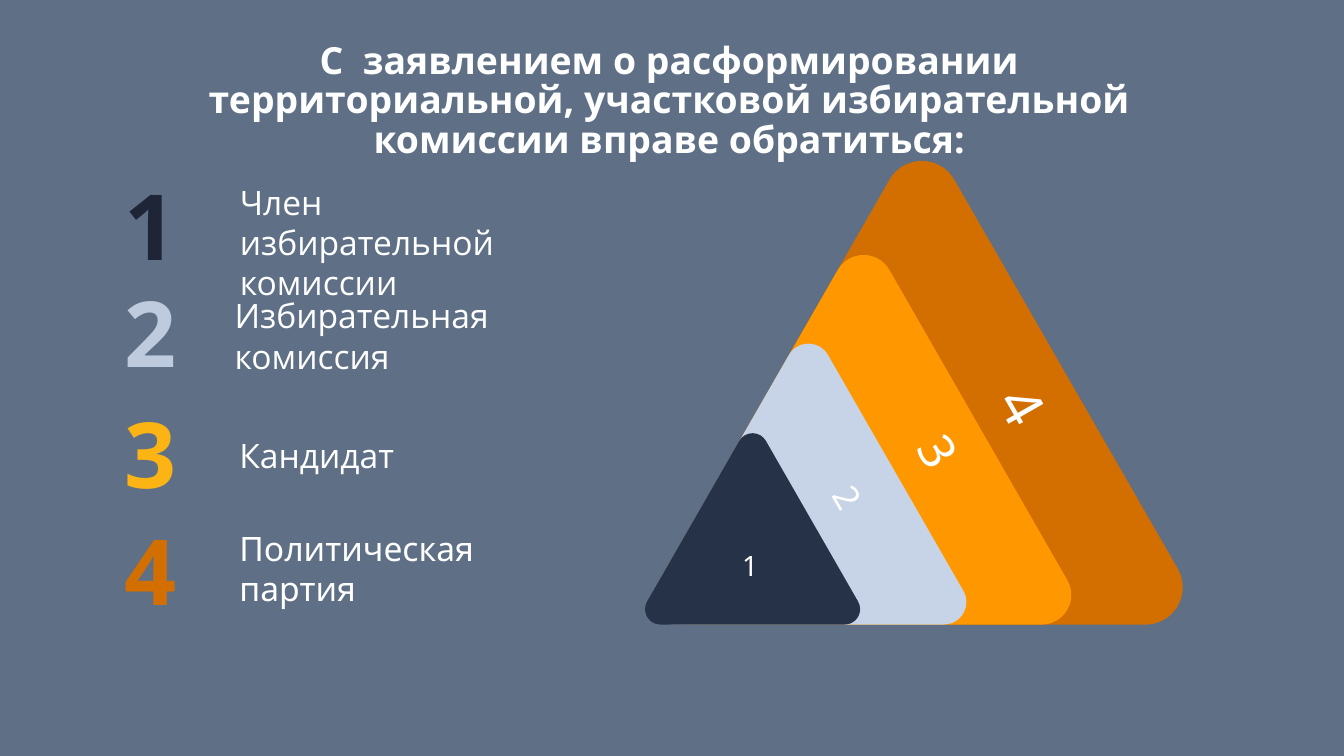
from math import cos, radians, sin, tan

from pptx import Presentation
from pptx.dml.color import RGBColor
from pptx.enum.text import MSO_ANCHOR, MSO_AUTO_SIZE, PP_ALIGN
from pptx.oxml.xmlchemy import OxmlElement
from pptx.util import Pt

NOTO, OPEN = "Noto Sans", "Open Sans"
WHITE = "FFFFFF"
TITLE = ("С  заявлением о расформировании территориальной, "
         "участковой избирательной комиссии вправе обратиться:")
BASE_Y = 334.6

# left, width, height, colour; from the largest to the smallest
TRIANGLES = [
    (354.2, 279.4, 248.4, "D26F00"),
    (351.4, 222.5, 198, "FF9800"),
    (348.5, 169.2, 150.5, "C7D3E6"),
    (345.6, 115.2, 102.5, "263248"),
]
# each corner's arc is split where it touches the bounding box
CORNER_ANGLES = [(90, 180, 210), (210, 270, 330), (330, 360, 450)]
# text, left, top, width, height, size, rotation
LABELS = [
    ("2", 415.4, 251.3, 77.8, 30.2, 18.8, 59.8),
    ("3", 452.9, 221.8, 100.8, 38.9, 26.2, 59.8),
    ("4", 491.8, 195.1, 113.8, 43.9, 30, 60.2),
    ("1", 362.9, 290.2, 77.8, 25.2, 15, 0),
]
# number top, number colour, text, text box, text font
ITEMS = [
    (87, "1D2536", "Член избирательной комиссии",
     (121.4, 93.8, 192.2, 51.1), OPEN),
    (144.2, "BECBDE", "Избирательная комиссия",
     (118.6, 154.6, 160.6, 51.1), OPEN),
    (209, "FCB414", "Кандидат", (121.2, 229.7, 155.5, 28.8), OPEN),
    (271.6, "D26F00", "Политическая партия",
     (121.2, 279.2, 155.5, 51.1), NOTO),
]


def rgb(value):
    return RGBColor.from_string(value)


def style(p, size, font, color=WHITE, bold=False, align=PP_ALIGN.CENTER):
    p.alignment = align
    for r in p.runs:
        r.font.size = Pt(size)
        r.font.name = font
        r.font.bold = bold
        r.font.color.rgb = rgb(color)


def add_title(slide):
    sp = slide.shapes.title
    sp.left, sp.top, sp.width, sp.height = map(Pt, (71.3, 13.7, 571, 79.9))
    tf = sp.text_frame
    tf.text = TITLE
    tf.word_wrap = True
    tf.auto_size = MSO_AUTO_SIZE.NONE
    tf.vertical_anchor = MSO_ANCHOR.MIDDLE
    tf.margin_left, tf.margin_top = Pt(10.8), Pt(5.6)
    p = tf.paragraphs[0]
    p.line_spacing = 0.89
    p.space_before, p.space_after = Pt(4), Pt(3)
    style(p, 20, NOTO, bold=True)


def add_text(slide, text, box, size, font, anchor=MSO_ANCHOR.MIDDLE, **look):
    sp = slide.shapes.add_textbox(*map(Pt, box))
    tf = sp.text_frame
    tf.word_wrap = True
    tf.vertical_anchor = anchor
    if anchor == MSO_ANCHOR.MIDDLE:
        tf.margin_top = tf.margin_bottom = 0
    tf.text = text
    style(tf.paragraphs[0], size, font, **look)
    return sp


def corner_points(x, y, radius, angles):
    """Return the start of a corner, then three Bezier points per arc."""
    def at(angle, along=0):
        c, s = cos(radians(angle)), sin(radians(angle))
        return (Pt(x + radius * (c - along * s)),
                Pt(y + radius * (s + along * c)))

    points = [at(angles[0])]
    for start, end in zip(angles, angles[1:]):
        k = 4 / 3 * tan(radians(end - start) / 4)
        points += [at(start, k), at(end, -k), at(end)]
    return points


def join_as_curve(lines):
    """Replace three line segments by one cubic curve."""
    curve = OxmlElement("a:cubicBezTo")
    lines[0].addprevious(curve)
    for line in lines:
        curve.append(line[0])
        line.getparent().remove(line)


def add_triangle(slide, left, width, height, color):
    """Draw a triangle with rounded corners, standing on the base line."""
    radius = width / 14
    centers = [
        (left + radius, BASE_Y - radius),
        (left + width / 2, BASE_Y - height + radius),
        (left + width - radius, BASE_Y - radius),
    ]
    points = []
    for (x, y), angles in zip(centers, CORNER_ANGLES):
        points += corner_points(x, y, radius, angles)
    builder = slide.shapes.build_freeform(*points[0])
    builder.add_line_segments(points[1:], close=True)
    sp = builder.convert_to_shape()
    lines = sp._element.xpath(".//a:lnTo")
    for corner in range(0, 21, 7):
        for i in (corner, corner + 3):
            join_as_curve(lines[i:i + 3])
    sp.shadow.inherit = False
    sp.fill.solid()
    sp.fill.fore_color.rgb = rgb(color)
    sp.line.fill.background()


def add_item(slide, number, number_top, color, text, box, font):
    add_text(slide, number, (39.9, number_top, 81.4, 66.2), 48.8, OPEN,
             color=color, bold=True)
    add_text(slide, text, box, 18, font,
             anchor=MSO_ANCHOR.TOP, align=PP_ALIGN.LEFT)


def main():
    prs = Presentation()
    prs.slide_width, prs.slide_height = Pt(720), Pt(405)
    slide = prs.slides.add_slide(prs.slide_layouts[5])
    slide.background.fill.solid()
    slide.background.fill.fore_color.rgb = rgb("5F7086")

    add_title(slide)
    for triangle in TRIANGLES:
        add_triangle(slide, *triangle)
    for text, *box, size, rotation in LABELS:
        add_text(slide, text, box, size, NOTO).rotation = rotation
    for number, item in enumerate(ITEMS, 1):
        add_item(slide, str(number), *item)

    prs.save("out.pptx")


if __name__ == "__main__":
    main()
